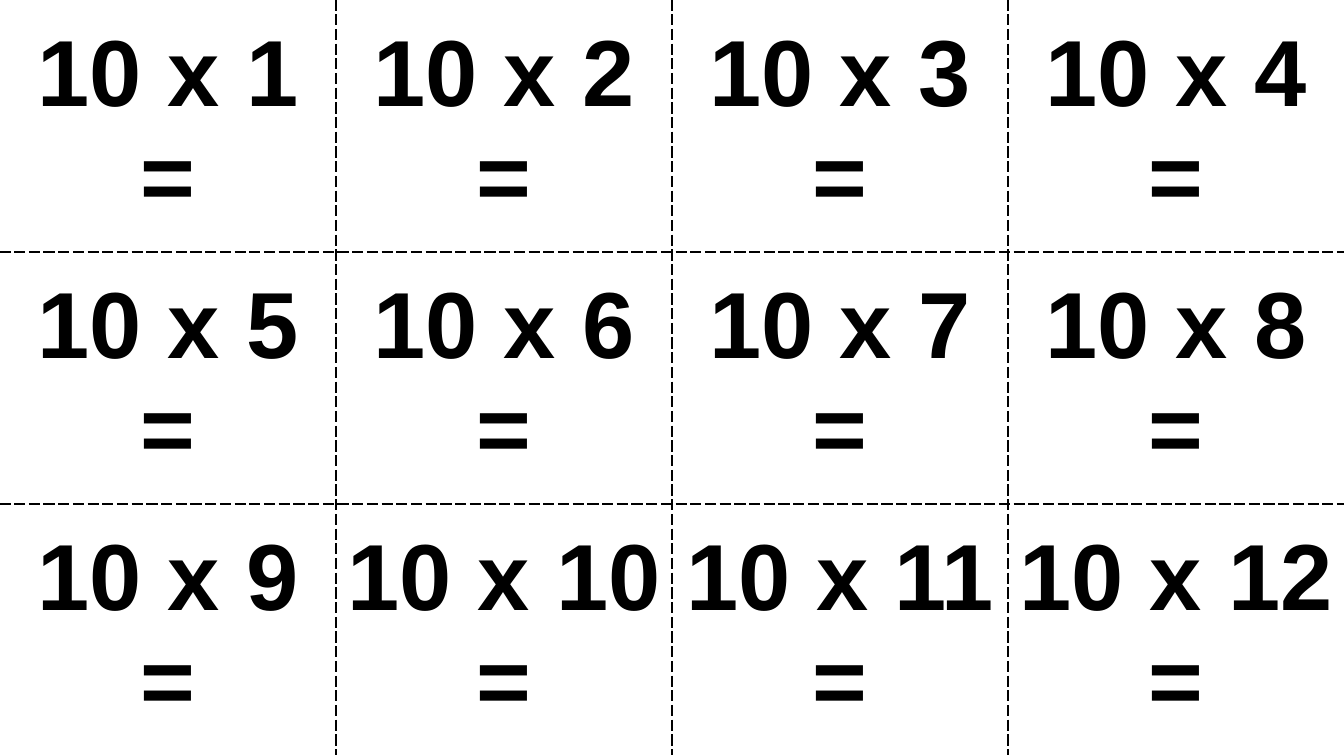
"""Build a sheet of ten times table cards with dashed cutting lines."""
from lxml import etree
from pptx import Presentation
from pptx.dml.color import RGBColor
from pptx.enum.text import MSO_ANCHOR, PP_ALIGN
from pptx.oxml.ns import qn
from pptx.util import Cm, Pt

BLACK = RGBColor(0x00, 0x00, 0x00)
WHITE = RGBColor(0xFF, 0xFF, 0xFF)
CENTER = PP_ALIGN.CENTER
MIDDLE = MSO_ANCHOR.MIDDLE
WIDTH, HEIGHT = Cm(33.87), Cm(19.05)
FACTOR = 10
ROWS, COLUMNS = 3, 4


def write(frame, text, size, font, color, bold=False, align=CENTER):
    paragraph = frame.paragraphs[0]
    paragraph.alignment = align
    run = paragraph.add_run()
    run.text = text
    run.font.size = Pt(size)
    run.font.name = font
    run.font.bold = bold
    run.font.color.rgb = color


class CardSheet:
    font = "Arial"
    size = 67
    ink = BLACK
    paper = WHITE
    line_width = Pt(1)

    def __init__(self, slide):
        self.slide = slide

    def border(self, cell, position, side, is_cut):
        properties = cell._tc.get_or_add_tcPr()
        line = etree.Element(qn(f"a:ln{side}"), w=str(self.line_width))
        fill = etree.SubElement(line, qn("a:solidFill"))
        color = self.ink if is_cut else self.paper
        etree.SubElement(fill, qn("a:srgbClr"), val=str(color))
        etree.SubElement(line, qn("a:prstDash"), val="dash" if is_cut else "solid")
        properties.insert(position, line)

    def card(self, cell, question, cuts):
        cell.vertical_anchor = MIDDLE
        cell.fill.solid()
        cell.fill.fore_color.rgb = self.paper
        write(cell.text_frame, question, self.size, self.font, self.ink, bold=True)
        for position, (side, is_cut) in enumerate(cuts.items()):
            self.border(cell, position, side, is_cut)

    def grid(self, rows, columns):
        cards = self.slide.shapes.add_table(rows, columns, 0, 0, WIDTH, HEIGHT).table
        for index, cell in enumerate(cards.iter_cells()):
            row, column = divmod(index, columns)
            cuts = {"L": column > 0, "R": column < columns - 1,
                    "T": row > 0, "B": row < rows - 1}
            self.card(cell, f"{FACTOR} x {index + 1} =", cuts)


def main():
    deck = Presentation()
    deck.slide_width, deck.slide_height = WIDTH, HEIGHT
    sheet = CardSheet(deck.slides.add_slide(deck.slide_layouts[6]))
    sheet.grid(ROWS, COLUMNS)
    deck.save("out.pptx")


if __name__ == "__main__":
    main()
